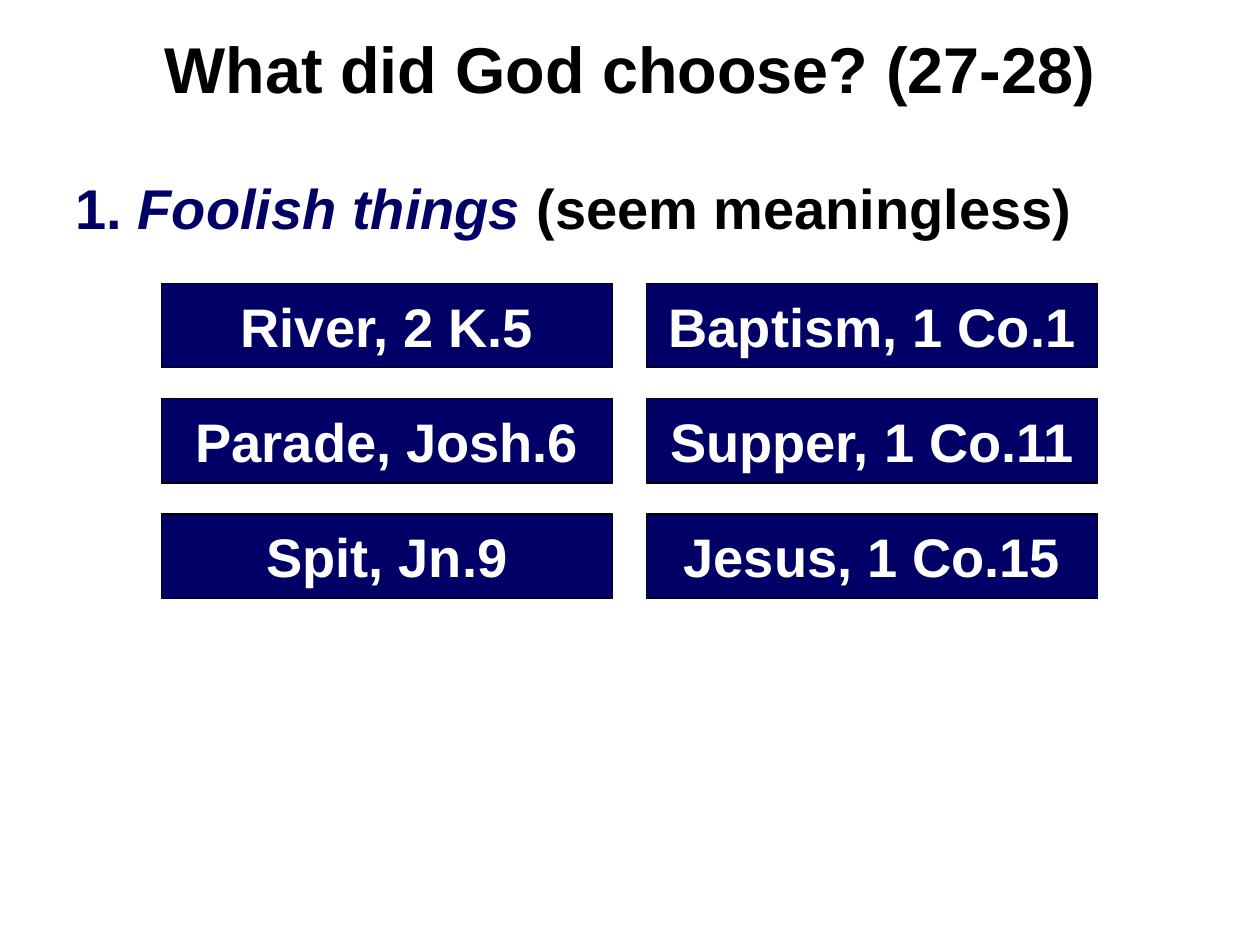
from pptx import Presentation
from pptx.dml.color import RGBColor
from pptx.enum.shapes import MSO_SHAPE
from pptx.enum.text import MSO_ANCHOR, PP_ALIGN
from pptx.util import Inches, Pt

COLORS = {"navy": "000066", "black": "000000", "white": "FFFFFF"}
FONT = "Arial"
EXAMPLE_COLUMNS = [
    ["River, 2 K.5", "Parade, Josh.6", "Spit, Jn.9"],
    ["Baptism, 1 Co.1", "Supper, 1 Co.11", "Jesus, 1 Co.15"],
]


def color(name):
    return RGBColor.from_string(COLORS[name])


def add_run(paragraph, text, size, color_name, italic=False):
    run = paragraph.add_run()
    run.text = text
    run.font.name = FONT
    run.font.size = Pt(size)
    run.font.bold = True
    run.font.italic = italic
    run.font.color.rgb = color(color_name)


def place_title(slide, left, top, width, height):
    title = slide.shapes.title
    title.left, title.top = Inches(left), Inches(top)
    title.width, title.height = Inches(width), Inches(height)
    title.fill.solid()
    title.fill.fore_color.rgb = color("white")
    title.text_frame.vertical_anchor = MSO_ANCHOR.MIDDLE
    paragraph = title.text_frame.paragraphs[0]
    paragraph.alignment = PP_ALIGN.CENTER
    add_run(paragraph, "What did God choose? (27-28)", 37, "black")


def add_point(slide, left, top, width, height):
    box = slide.shapes.add_textbox(Inches(left), Inches(top), Inches(width), Inches(height))
    box.text_frame.word_wrap = True
    paragraph = box.text_frame.paragraphs[0]
    paragraph.space_before = Pt(4)
    add_run(paragraph, "1. ", 32, "navy")
    add_run(paragraph, "Foolish things ", 32, "navy", italic=True)
    add_run(paragraph, "(seem meaningless)", 32, "black")


def add_example(slide, text, left, top, width, height):
    shape = slide.shapes.add_shape(
        MSO_SHAPE.RECTANGLE, Inches(left), Inches(top), Inches(width), Inches(height)
    )
    shape.shadow.inherit = False
    shape.fill.solid()
    shape.fill.fore_color.rgb = color("navy")
    shape.line.color.rgb = color("black")
    shape.line.width = Pt(0.75)
    shape.text_frame.word_wrap = False
    shape.text_frame.vertical_anchor = MSO_ANCHOR.MIDDLE
    paragraph = shape.text_frame.paragraphs[0]
    paragraph.alignment = PP_ALIGN.CENTER
    add_run(paragraph, text, 31, "white")


def add_example_grid(slide, left, top, width, height):
    cell_width, cell_height = 3.58, 0.67
    column_step = width - cell_width
    row_step = (height - cell_height) / (len(EXAMPLE_COLUMNS[0]) - 1)
    for column, examples in enumerate(EXAMPLE_COLUMNS):
        for row, text in enumerate(examples):
            add_example(
                slide, text, left + column * column_step, top + row * row_step,
                cell_width, cell_height,
            )


def main():
    presentation = Presentation()
    presentation.slide_width = Inches(10)
    presentation.slide_height = Inches(7.5)
    slide = presentation.slides.add_slide(presentation.slide_layouts[5])
    place_title(slide, 0, 0, 10, 1.08)
    add_point(slide, 0.5, 1.33, 9, 4.42)
    add_example_grid(slide, 1.28, 2.25, 7.43, 2.5)
    presentation.save("out.pptx")


if __name__ == "__main__":
    main()
